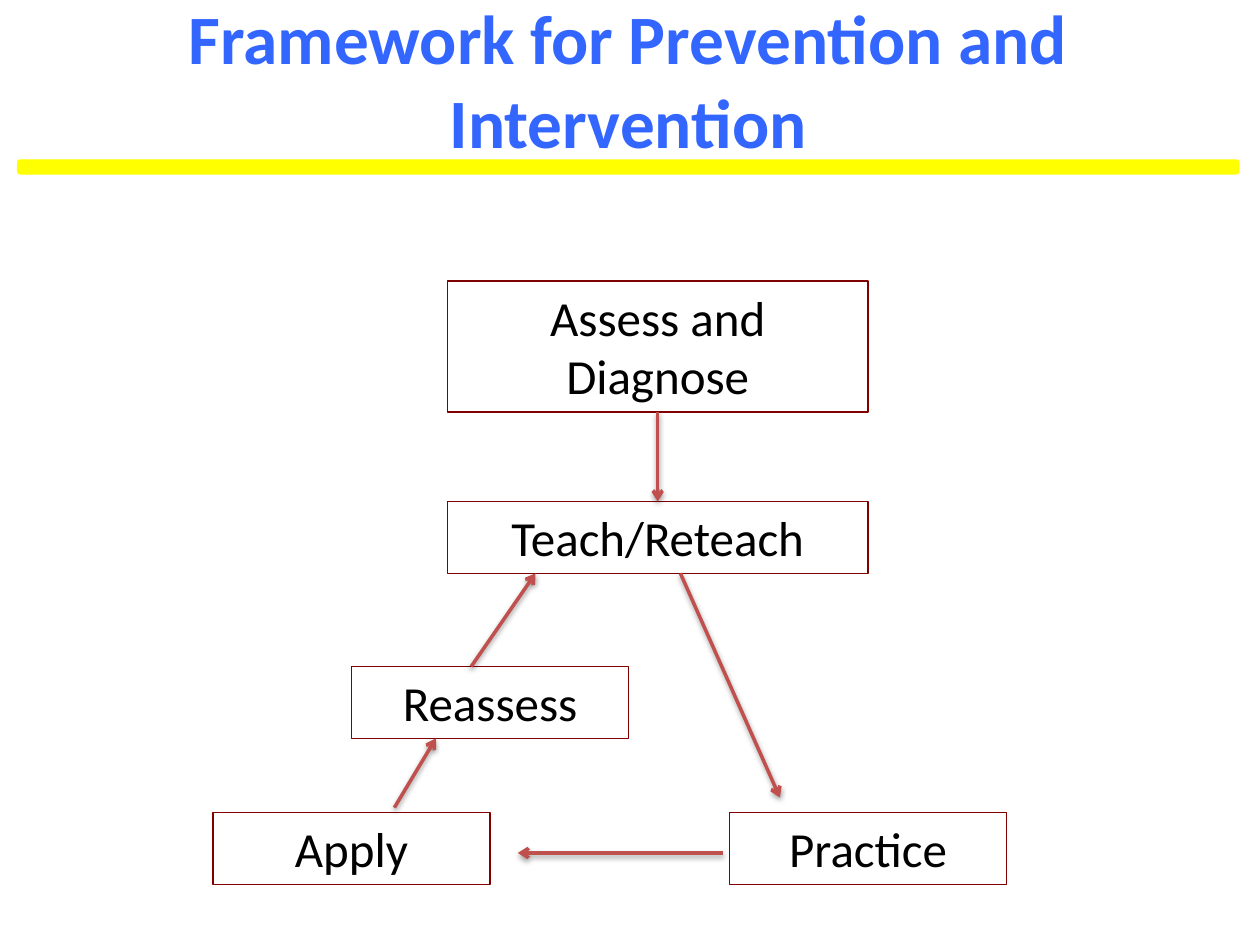
from dataclasses import dataclass

from lxml.etree import SubElement
from pptx import Presentation
from pptx.dml.color import RGBColor
from pptx.enum.shapes import MSO_CONNECTOR, MSO_SHAPE
from pptx.enum.text import MSO_ANCHOR, MSO_AUTO_SIZE, PP_ALIGN
from pptx.oxml.ns import qn
from pptx.util import Pt


@dataclass(frozen=True)
class Theme:
    font: str = "Calibri"
    title_size: float = 39.6
    step_size: float = 28
    title: RGBColor = RGBColor(0x33, 0x66, 0xFF)
    text: RGBColor = RGBColor(0, 0, 0)
    border: RGBColor = RGBColor(0x80, 0, 0)
    arrow: RGBColor = RGBColor(0xC0, 0x50, 0x4D)
    rule: RGBColor = RGBColor(0xFF, 0xFF, 0)
    thin: float = 0.75
    thick: float = 2


THEME = Theme()
BANNER_LEFT, BANNER_WIDTH = 10.08, 697.68
WIDE, NARROW = 240.48, 158.4
ONE_LINE, TWO_LINES = 41.04, 74.88

STEPS = {
    "Assess and Diagnose": (255.6, 160.56, WIDE, TWO_LINES),
    "Reassess": (200.88, 380.88, NARROW, ONE_LINE),
    "Teach/Reteach": (255.6, 286.56, WIDE, ONE_LINE),
    "Apply": (121.68, 464.4, NARROW, ONE_LINE),
    "Practice": (416.88, 464.4, NARROW, ONE_LINE),
}
ASSESS_TO_TEACH = (375.84, 235.44, 375.84, 286.56)
CYCLE = [
    (388.8, 327.6, 445.68, 455.76),
    (269.28, 380.88, 306, 327.6),
    (225.36, 461.52, 249.12, 421.92),
    (413.28, 487.44, 295.92, 487.44),
]


def points(values):
    return [Pt(value) for value in values]


def apply_format(target, values):
    for name, value in values.items():
        setattr(target, name, value)


def write_text(shape, wording, frame_format, font_format):
    frame = shape.text_frame
    apply_format(frame, {"word_wrap": True, **frame_format})
    paragraph = frame.paragraphs[0]
    paragraph.alignment = PP_ALIGN.CENTER
    run = paragraph.add_run()
    run.text = wording
    color = font_format.pop("color")
    apply_format(run.font, {"name": THEME.font, **font_format})
    run.font.color.rgb = color


def set_line(shape, color, width):
    shape.line.color.rgb = color
    shape.line.width = Pt(width)


def add_title(slide, wording):
    heading = slide.shapes.add_textbox(*points((BANNER_LEFT, 0, BANNER_WIDTH, 90)))
    write_text(
        heading,
        wording,
        {"vertical_anchor": MSO_ANCHOR.MIDDLE},
        {"size": Pt(THEME.title_size), "bold": True, "color": THEME.title},
    )


def add_step(slide, wording, bounds):
    step = slide.shapes.add_shape(MSO_SHAPE.RECTANGLE, *points(bounds))
    step.shadow.inherit = False
    step.fill.background()
    set_line(step, THEME.border, THEME.thin)
    write_text(
        step,
        wording,
        {"vertical_anchor": MSO_ANCHOR.TOP, "auto_size": MSO_AUTO_SIZE.SHAPE_TO_FIT_TEXT},
        {"size": Pt(THEME.step_size), "color": THEME.text},
    )
    return step


def add_arrow(slide, ends):
    arrow = slide.shapes.add_connector(MSO_CONNECTOR.STRAIGHT, *points(ends))
    set_line(arrow, THEME.arrow, THEME.thick)
    properties = arrow.line._get_or_add_ln().getparent()
    SubElement(properties.find(qn("a:ln")), qn("a:tailEnd"), type="arrow")
    effects = SubElement(properties, qn("a:effectLst"))
    shadow = SubElement(
        effects, qn("a:outerShdw"),
        blurRad="40000", dist="20000", dir="5400000", rotWithShape="0",
    )
    shade = SubElement(shadow, qn("a:srgbClr"), val="000000")
    SubElement(shade, qn("a:alpha"), val="38000")
    return arrow


def add_rule(slide):
    rule = slide.shapes.add_shape(
        MSO_SHAPE.ROUNDED_RECTANGLE, *points((BANNER_LEFT, 91.44, BANNER_WIDTH, 7.92))
    )
    rule.shadow.inherit = False
    rule.fill.solid()
    rule.fill.fore_color.rgb = THEME.rule
    set_line(rule, THEME.rule, THEME.thin)


def main():
    presentation = Presentation()
    apply_format(presentation, {"slide_width": Pt(720), "slide_height": Pt(540)})
    slide = presentation.slides.add_slide(presentation.slide_layouts[6])

    add_title(slide, "Framework for Prevention and Intervention")
    steps = {wording: add_step(slide, wording, bounds) for wording, bounds in STEPS.items()}

    first_arrow = add_arrow(slide, ASSESS_TO_TEACH)
    first_arrow.begin_connect(steps["Assess and Diagnose"], 2)
    first_arrow.end_connect(steps["Teach/Reteach"], 0)
    for ends in CYCLE:
        add_arrow(slide, ends)

    add_rule(slide)
    presentation.save("out.pptx")


if __name__ == "__main__":
    main()
